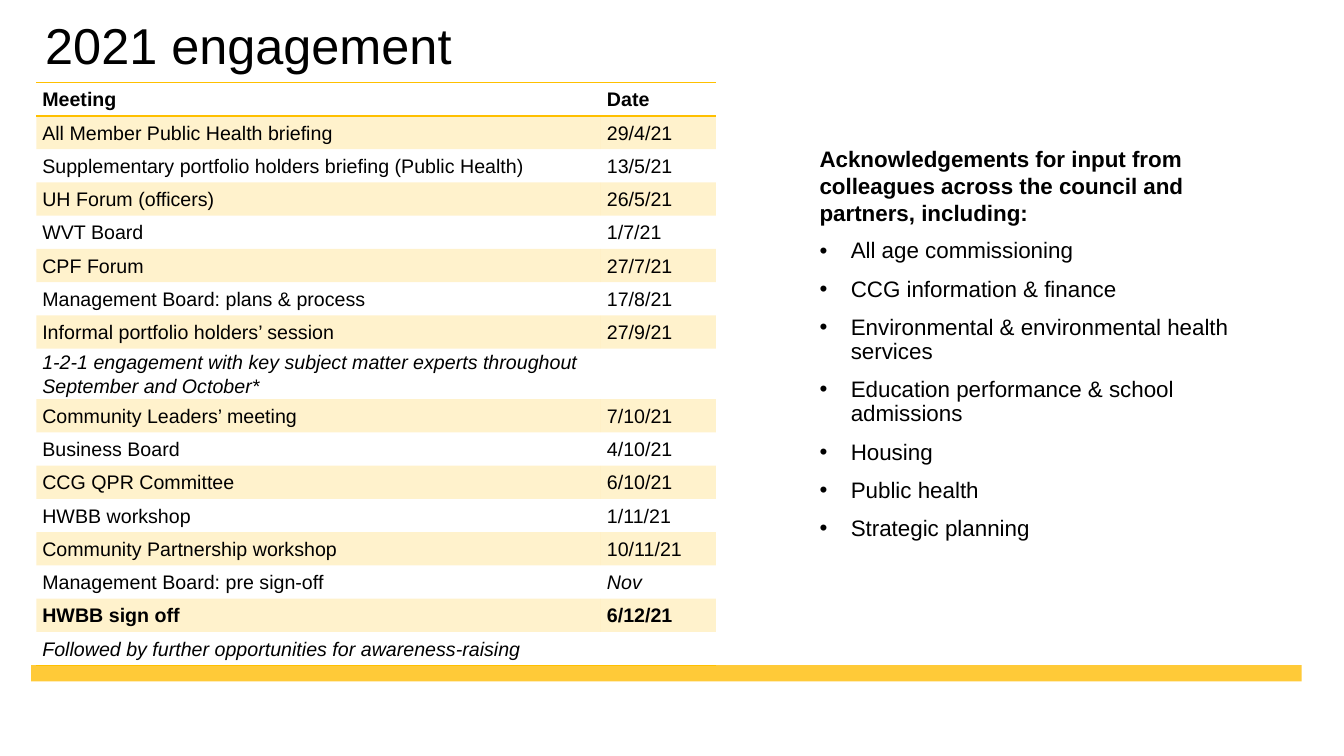
from lxml import etree
from pptx import Presentation
from pptx.dml.color import RGBColor
from pptx.enum.shapes import MSO_SHAPE
from pptx.enum.text import MSO_ANCHOR
from pptx.oxml.ns import qn
from pptx.util import Inches, Pt

RECTANGLE = MSO_SHAPE.RECTANGLE
MIDDLE, BOTTOM, TOP = MSO_ANCHOR.MIDDLE, MSO_ANCHOR.BOTTOM, MSO_ANCHOR.TOP

FONT = "Arial"
COLORS = {"text": "000000", "bar": "FFCA38", "table": "FFC000"}
BAND_ALPHA = 20000
NO_GRID_STYLE = "{2D5ABB26-0587-4C30-8999-92F81FD0307C}"

MEETINGS = [
    ("Meeting", "Date", "b", "b"),
    ("All Member Public Health briefing", "29/4/21", "", ""),
    ("Supplementary portfolio holders briefing (Public Health)", "13/5/21", "", ""),
    ("UH Forum (officers)", "26/5/21", "", ""),
    ("WVT Board", "1/7/21", "", ""),
    ("CPF Forum", "27/7/21", "", ""),
    ("Management Board: plans & process", "17/8/21", "", ""),
    ("Informal portfolio holders’ session", "27/9/21", "", ""),
    ("1-2-1 engagement with key subject matter experts throughout September and October*",
     "", "i", ""),
    ("Community Leaders’ meeting", "7/10/21", "", ""),
    ("Business Board", "4/10/21", "", ""),
    ("CCG QPR Committee", "6/10/21", "", ""),
    ("HWBB workshop", "1/11/21", "", ""),
    ("Community Partnership workshop", "10/11/21", "", ""),
    ("Management Board: pre sign-off", "Nov", "", "i"),
    ("HWBB sign off", "6/12/21", "b", "b"),
    ("Followed by further opportunities for awareness-raising", "", "i", ""),
]
ACKNOWLEDGEMENTS = "Acknowledgements for input from colleagues across the council and partners, including:"
CONTRIBUTORS = [
    "All age commissioning",
    "CCG information & finance",
    "Environmental & environmental health services",
    "Education performance & school admissions",
    "Housing",
    "Public health",
    "Strategic planning",
]


def add_run(paragraph, text, size, style=""):
    run = paragraph.add_run()
    run.text = text
    run.font.name = FONT
    run.font.size = Pt(size)
    run.font.bold = "b" in style
    run.font.italic = "i" in style
    run.font.color.rgb = RGBColor.from_string(COLORS["text"])


def add_text_frame(slide, left, top, width, height, anchor):
    box = slide.shapes.add_textbox(Inches(left), Inches(top), Inches(width), Inches(height))
    box.text_frame.word_wrap = True
    box.text_frame.vertical_anchor = anchor
    return box.text_frame


def add_bar(slide):
    bar = slide.shapes.add_shape(RECTANGLE, Inches(0.31), Inches(6.6), Inches(12.6), Inches(0.16))
    bar.shadow.inherit = False
    bar.fill.solid()
    bar.fill.fore_color.rgb = RGBColor.from_string(COLORS["bar"])
    bar.line.fill.background()


def add_title(slide):
    title = add_text_frame(slide, 0.35, 0.15, 6.29, 0.65, BOTTOM).paragraphs[0]
    title.line_spacing = 0.9
    add_run(title, "2021 engagement", 36)


def add_solid_fill(parent, alpha=None):
    fill = etree.SubElement(parent, qn("a:solidFill"))
    color = etree.SubElement(fill, qn("a:srgbClr"), val=COLORS["table"])
    if alpha:
        etree.SubElement(color, qn("a:alpha"), val=str(alpha))


def format_cell(cell, borders, banded):
    cell.margin_left = cell.margin_right = Inches(0.06)
    cell.margin_top = cell.margin_bottom = 0
    cell.vertical_anchor = MIDDLE
    properties = cell._tc.get_or_add_tcPr()
    for border in borders:
        line = etree.SubElement(properties, qn(border), w=str(Pt(1)))
        add_solid_fill(line)
    if banded:
        add_solid_fill(properties, BAND_ALPHA)
    else:
        cell.fill.background()


def fill_cell(cell, text, style):
    paragraph = cell.text_frame.paragraphs[0]
    paragraph.line_spacing = 1.07
    paragraph.space_after = Pt(6)
    if text:
        add_run(paragraph, text, 14, style)
    else:
        paragraph.font.size = Pt(14)


def add_meetings_table(slide):
    last = len(MEETINGS) - 1
    frame = slide.shapes.add_table(len(MEETINGS), 2, Inches(0.36), Inches(0.82),
                                   Inches(6.74), Inches(0.33 * len(MEETINGS)))
    table = frame.table
    table.first_row = table.horz_banding = False
    table._tbl.tblPr.find(qn("a:tableStyleId")).text = NO_GRID_STYLE
    table.columns[0].width = Inches(5.6)
    table.columns[1].width = Inches(1.14)
    borders = {0: ["a:lnT", "a:lnB"], last: ["a:lnB"]}
    for index, (meeting, date, meeting_style, date_style) in enumerate(MEETINGS):
        table.rows[index].height = Inches(0.33)
        entries = ((meeting, meeting_style), (date, date_style))
        for column, (text, style) in enumerate(entries):
            cell = table.cell(index, column)
            format_cell(cell, borders.get(index, []), index % 2 == 1)
            fill_cell(cell, text, style)


def add_bullet(paragraph):
    properties = paragraph._p.get_or_add_pPr()
    properties.set("marL", str(Inches(0.31)))
    properties.set("indent", str(-Inches(0.31)))
    etree.SubElement(properties, qn("a:buFont"), typeface=FONT)
    etree.SubElement(properties, qn("a:buChar"), char="•")


def add_acknowledgements(slide):
    frame = add_text_frame(slide, 8.03, 1.39, 4.79, 4.73, TOP)
    add_run(frame.paragraphs[0], ACKNOWLEDGEMENTS, 16, "b")
    for contributor in CONTRIBUTORS:
        paragraph = frame.add_paragraph()
        add_bullet(paragraph)
        paragraph.line_spacing = 0.9
        paragraph.space_before = Pt(10)
        add_run(paragraph, contributor, 16)


def main():
    presentation = Presentation()
    presentation.slide_width = Inches(13.33)
    presentation.slide_height = Inches(7.5)
    slide = presentation.slides.add_slide(presentation.slide_layouts[6])
    add_bar(slide)
    add_title(slide)
    add_meetings_table(slide)
    add_acknowledgements(slide)
    presentation.save("out.pptx")


if __name__ == "__main__":
    main()
